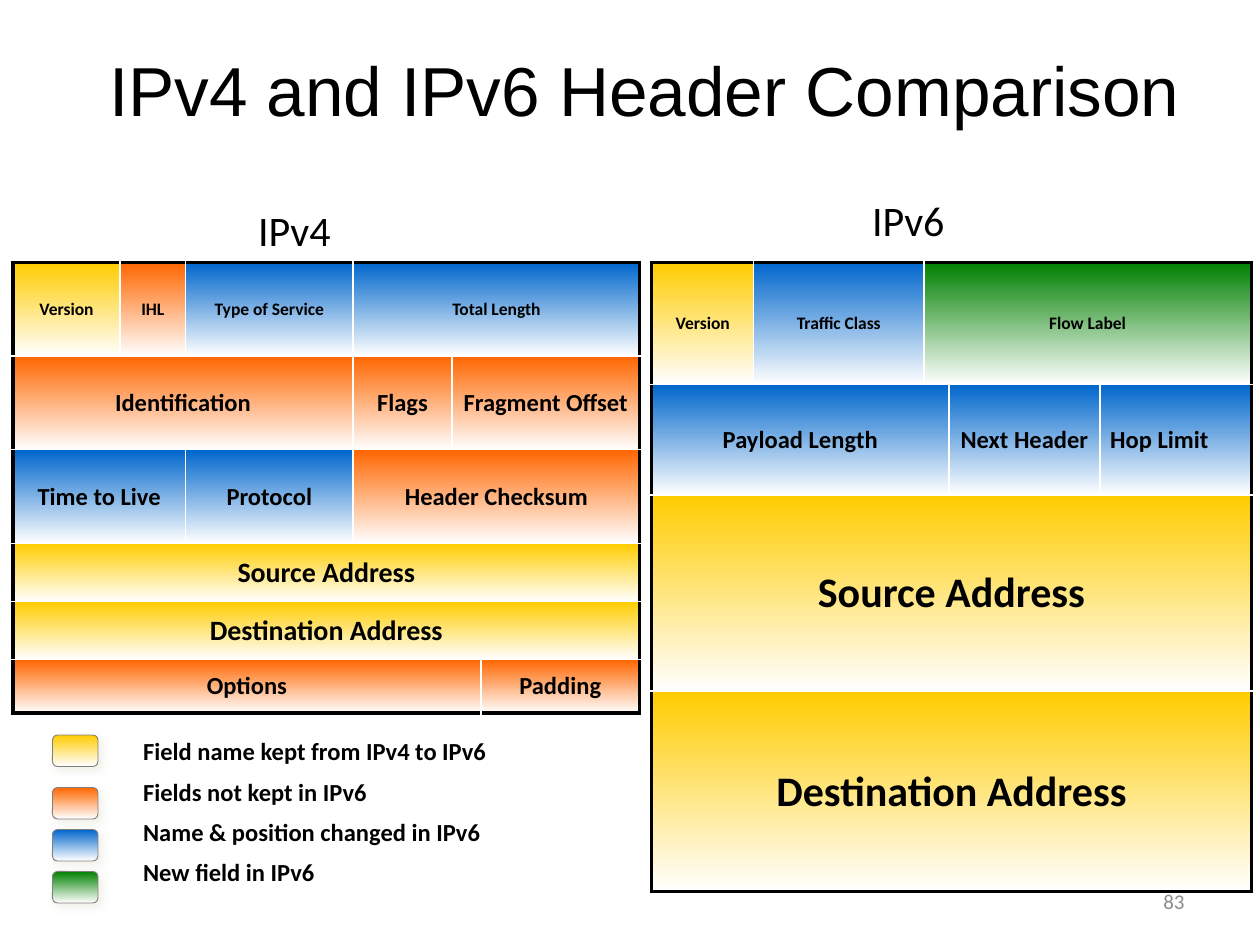
import pptx
import pptx.dml.color
import pptx.enum.shapes
import pptx.enum.text
import pptx.oxml
import pptx.oxml.ns
import pptx.util

Pt = pptx.util.Pt
ALIGN = pptx.enum.text.PP_ALIGN
ANCHOR = pptx.enum.text.MSO_ANCHOR
COLORS = {
    "kept": "FFCC00",
    "dropped": "FF6600",
    "changed": "0066CC",
    "new": "008000",
    "fade": "FFFFFF",
    "frame": "000000",
    "grid": "FFFFFF",
    "text": "000000",
    "page": "8C8C8C",
    "key_line": "808080",
    "shadow": "EEECE1",
}
INSET_X, INSET_Y = Pt(5.76), Pt(3)

IPV4_COLUMNS = [61.2, 37.4, 95.8, 56.4, 16.6, 90.8]
IPV4_ROWS = [
    (53.5, 10, [("Version", "kept", 1), ("IHL", "dropped", 1),
                ("Type of Service", "changed", 1), ("Total Length", "changed", 3)]),
    (53.5, 14, [("Identification", "dropped", 3), ("Flags", "dropped", 1),
                ("Fragment Offset", "dropped", 2)]),
    (53.5, 14, [("Time to Live", "changed", 2), ("Protocol", "changed", 1),
                ("Header Checksum", "dropped", 3)]),
    (33.2, 16, [("Source Address", "kept", 6)]),
    (33.2, 16, [("Destination Address", "kept", 6)]),
    (30.6, 14, [("Options", "dropped", 5), ("Padding", "dropped", 1)]),
]
IPV6_COLUMNS = [58.3, 97.2, 13.7, 86.4, 86.4]
IPV6_ROWS = [
    (69.6, 10, [("Version", "kept", 1), ("Traffic Class", "changed", 1),
                ("Flow Label", "new", 3)]),
    (63.2, 14, [("Payload Length", "changed", 3), ("Next Header", "changed", 1),
                ("Hop Limit", "changed", 1)]),
    (112.2, 24, [("Source Address", "kept", 5)]),
    (114.6, 24, [("Destination Address", "kept", 5)]),
]
LEGEND = [
    ("kept", 0, "Field name kept from IPv4 to IPv6"),
    ("dropped", 30, "Fields not kept in IPv6"),
    ("changed", 54, "Name & position changed in IPv6"),
    ("new", 78, "New field in IPv6"),
]


def rgb(name):
    return pptx.dml.color.RGBColor.from_string(COLORS[name])


def style(paragraph, size, color="text", bold=False, align=ALIGN.CENTER, font="Calibri"):
    paragraph.alignment = align
    paragraph.font.name = font
    paragraph.font.size = Pt(size)
    paragraph.font.bold = bold
    paragraph.font.color.rgb = rgb(color)


def fade_fill(fill, color):
    fill.gradient()
    fill.gradient_angle = 270
    for stop, name in zip(fill.gradient_stops, (color, "fade")):
        stop.color.rgb = rgb(name)


def set_borders(cell, outer_sides):
    properties = cell._tc.get_or_add_tcPr()
    for position, side in enumerate("LRTB"):
        color, width = ("frame", 2.25) if side in outer_sides else ("grid", 1)
        properties.insert(position, pptx.oxml.parse_xml(
            f'<a:ln{side} {pptx.oxml.ns.nsdecls("a")} w="{Pt(width)}"><a:solidFill>'
            f'<a:srgbClr val="{COLORS[color]}"/></a:solidFill></a:ln{side}>'))


def place_title(slide, left, top, width, height):
    title = slide.shapes.title
    title.left, title.top, title.width, title.height = map(Pt, (left, top, width, height))
    title.text_frame.text = "IPv4 and IPv6 Header Comparison"
    title.text_frame.vertical_anchor = ANCHOR.MIDDLE
    style(title.text_frame.paragraphs[0], 39.6, font="Arial")


def place_text(slide, left, top, width, height, lines):
    frame = slide.shapes.add_textbox(Pt(left), Pt(top), Pt(width), Pt(height)).text_frame
    frame.word_wrap = True
    frame.margin_left = frame.margin_right = INSET_X
    frame.margin_top = frame.margin_bottom = INSET_Y
    frame.text = "\n".join(lines)
    return frame


def place_heading(slide, left, top, width, version):
    style(place_text(slide, left, top, width, 34.6, [version]).paragraphs[0], 24)


def place_header_table(slide, left, top, columns, rows):
    table = slide.shapes.add_table(
        len(rows), len(columns), Pt(left), Pt(top),
        Pt(sum(columns)), Pt(sum(height for height, _, _ in rows))).table
    table.first_row = table.horz_banding = False
    for column, width in zip(table.columns, columns):
        column.width = Pt(width)
    for row_index, (height, size, fields) in enumerate(rows):
        table.rows[row_index].height = Pt(height)
        start = 0
        for label, color, span in fields:
            end = start + span
            outer = (("L" if start == 0 else "") + ("R" if end == len(columns) else "")
                     + ("T" if row_index == 0 else "")
                     + ("B" if row_index == len(rows) - 1 else ""))
            for index in range(start, end):
                covered = table.cell(row_index, index)
                fade_fill(covered.fill, color)
                set_borders(covered, outer)
            field = table.cell(row_index, start)
            if span > 1:
                field.merge(table.cell(row_index, end - 1))
            field.text = label
            field.vertical_anchor = ANCHOR.MIDDLE
            field.margin_left = field.margin_right = INSET_X
            field.margin_top = field.margin_bottom = INSET_Y
            paragraph = field.text_frame.paragraphs[0]
            paragraph.line_spacing = 0.95
            style(paragraph, size, bold=True,
                  align=ALIGN.LEFT if label == "Hop Limit" else ALIGN.CENTER)
            start = end


def place_legend(slide, left, top, width, height):
    for color, offset, _ in LEGEND:
        key = slide.shapes.add_shape(
            pptx.enum.shapes.MSO_SHAPE.ROUNDED_RECTANGLE,
            Pt(left), Pt(top + offset), Pt(26), Pt(18))
        fade_fill(key.fill, color)
        key.line.color.rgb = rgb("key_line")
        key.line.width = Pt(0.5)
        key._element.spPr.append(pptx.oxml.parse_xml(
            f'<a:effectLst {pptx.oxml.ns.nsdecls("a")}><a:outerShdw blurRad="{Pt(5)}" '
            f'dist="{Pt(3)}" dir="2700000"><a:srgbClr val="{COLORS["shadow"]}">'
            '<a:alpha val="75000"/></a:srgbClr></a:outerShdw></a:effectLst>'))
    meanings = place_text(slide, left + 46, top - 1, width - 46, height,
                          [meaning for _, _, meaning in LEGEND])
    for index, paragraph in enumerate(meanings.paragraphs):
        style(paragraph, 14, bold=True, align=ALIGN.LEFT)
        paragraph.line_spacing = 0.95
        paragraph.space_before = Pt(7 if index else 0)


def place_page_number(slide, left, top, width, height):
    number = place_text(slide, left, top, width, height, ["83"])
    number.margin_right = Pt(7.2)
    number.vertical_anchor = ANCHOR.MIDDLE
    style(number.paragraphs[0], 12, color="page", align=ALIGN.RIGHT)


def main():
    deck = pptx.Presentation()
    deck.slide_width, deck.slide_height = Pt(720), Pt(540)
    slide = deck.slides.add_slide(deck.slide_layouts[5])
    place_title(slide, 29.5, 24.5, 677.5, 52.5)
    place_header_table(slide, 7.4, 150, IPV4_COLUMNS, IPV4_ROWS)
    place_header_table(slide, 372.4, 150, IPV6_COLUMNS, IPV6_ROWS)
    place_heading(slide, 138, 114, 60.5, "IPv4")
    place_heading(slide, 420, 108, 198, "IPv6")
    place_legend(slide, 30, 420, 336, 96)
    place_page_number(slide, 516, 500.5, 168, 29)
    deck.save("out.pptx")


if __name__ == "__main__":
    main()
